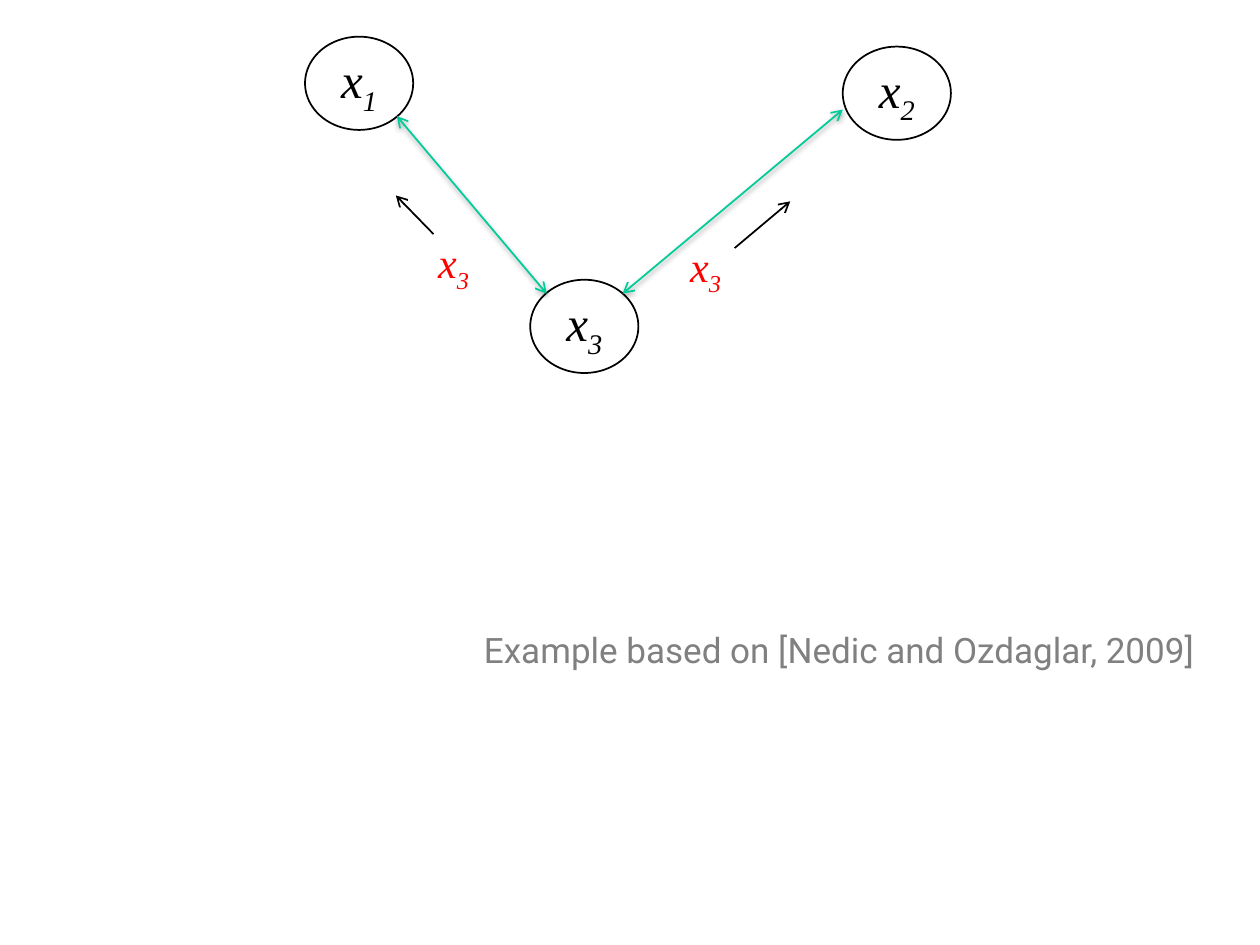
from lxml.etree import SubElement
from pptx import Presentation
from pptx.dml.color import RGBColor
from pptx.enum.shapes import MSO_CONNECTOR, MSO_SHAPE
from pptx.enum.text import MSO_ANCHOR, PP_ALIGN
from pptx.oxml.ns import qn
from pptx.util import Cm, Pt

BLACK = RGBColor(0x00, 0x00, 0x00)
WHITE = RGBColor(0xFF, 0xFF, 0xFF)
RED = RGBColor(0xFF, 0x00, 0x00)
GREEN = RGBColor(0x00, 0xCC, 0x99)
GREY = RGBColor(0x80, 0x80, 0x80)

NODES = [("1", 6.15, 0.74), ("3", 10.69, 5.64), ("2", 16.99, 0.94)]
LINKS = [(8.0, 2.34, 11.02, 5.92), (12.55, 5.92, 16.99, 2.21)]
MESSAGES = [
    ((8.56, 4.65), (8.74, 4.72, 7.98, 3.94)),
    ((13.64, 4.72), (14.81, 5.0, 15.93, 4.06)),
]


def add_run(paragraph, text, name, size, color):
    """Append a formatted run to the paragraph and return it."""
    run = paragraph.add_run()
    run.text = text
    run.font.name = name
    run.font.size = Pt(size)
    run.font.color.rgb = color
    return run


def add_variable(shape, index, size, color):
    """Write an italic x with a subscript index, centred in the shape."""
    paragraph = shape.text_frame.paragraphs[0]
    paragraph.alignment = PP_ALIGN.CENTER
    for text in ("x", index):
        run = add_run(paragraph, text, "Times New Roman", size, color)
        run.font.italic = True
    run.font._element.set("baseline", "-25000")


def add_node(slide, index, left, top):
    """Draw one agent as an outlined ellipse."""
    node = slide.shapes.add_shape(
        MSO_SHAPE.OVAL, Cm(left), Cm(top), Cm(2.18), Cm(1.88))
    node.shadow.inherit = False
    node.fill.solid()
    node.fill.fore_color.rgb = WHITE
    node.line.color.rgb = BLACK
    node.line.width = Pt(1)
    node.text_frame.vertical_anchor = MSO_ANCHOR.MIDDLE
    add_variable(node, index, 28, BLACK)


def add_arrow(slide, points, color, ends):
    """Draw a straight line with open arrowheads and return its effect list."""
    arrow = slide.shapes.add_connector(
        MSO_CONNECTOR.STRAIGHT, *(Cm(value) for value in points))
    arrow.line.color.rgb = color
    arrow.line.width = Pt(1)
    line = arrow.line._get_or_add_ln()
    for end in ends:
        SubElement(line, qn(f"a:{end}"), type="arrow")
    return SubElement(arrow._element.spPr, qn("a:effectLst"))


def add_link(slide, points):
    """Draw a two-way link with a soft shadow below it."""
    effects = add_arrow(slide, points, GREEN, ("headEnd", "tailEnd"))
    shadow = SubElement(
        effects, qn("a:outerShdw"), blurRad=str(Pt(3.1)), dist=str(Pt(1.6)),
        dir="5400000", rotWithShape="0")
    color = SubElement(shadow, qn("a:srgbClr"), val=str(BLACK))
    SubElement(color, qn("a:alpha"), val="38000")


def add_message(slide, position, points):
    """Label a sent value and show its direction."""
    left, top = position
    label = slide.shapes.add_textbox(Cm(left), Cm(top), Cm(1.17), Cm(1.27))
    label.text_frame.word_wrap = False
    add_variable(label, "3", 24, RED)
    add_arrow(slide, points, BLACK, ("tailEnd",))


def add_caption(slide, text):
    """Place the source note at the bottom of its box."""
    caption = slide.shapes.add_textbox(Cm(9.3), Cm(8.86), Cm(15.24), Cm(4.78))
    frame = caption.text_frame
    frame.word_wrap = False
    frame.vertical_anchor = MSO_ANCHOR.BOTTOM
    paragraph = frame.paragraphs[0]
    paragraph.alignment = PP_ALIGN.CENTER
    add_run(paragraph, text, "Roboto", 20, GREY)


def main():
    """Build the network slide and save it."""
    presentation = Presentation()
    presentation.slide_width = Cm(25.4)
    presentation.slide_height = Cm(19.05)
    slide = presentation.slides.add_slide(presentation.slide_layouts[6])
    add_caption(slide, "Example based on [Nedic and Ozdaglar, 2009]")
    for index, left, top in NODES:
        add_node(slide, index, left, top)
    for points in LINKS:
        add_link(slide, points)
    for position, points in MESSAGES:
        add_message(slide, position, points)
    presentation.save("out.pptx")


if __name__ == "__main__":
    main()
